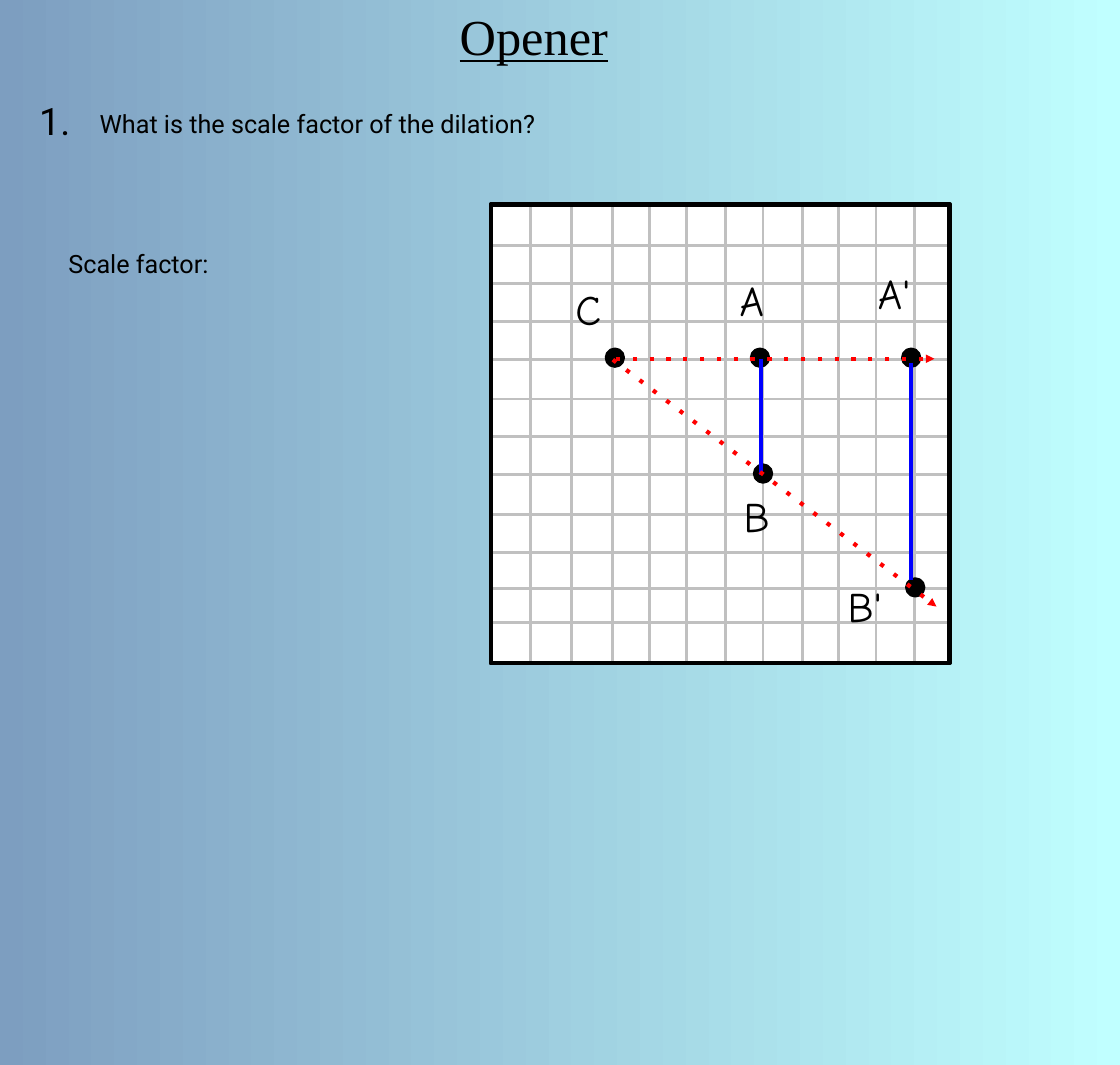
from lxml import etree
from pptx import Presentation
from pptx.dml.color import RGBColor
from pptx.enum.shapes import MSO_CONNECTOR, MSO_SHAPE
from pptx.enum.text import MSO_ANCHOR, PP_ALIGN
from pptx.oxml.ns import qn
from pptx.util import Inches, Pt

STRAIGHT = MSO_CONNECTOR.STRAIGHT
OVAL = MSO_SHAPE.OVAL
RECTANGLE = MSO_SHAPE.RECTANGLE
TOP = MSO_ANCHOR.TOP
LEFT = PP_ALIGN.LEFT

BLACK = RGBColor(0x00, 0x00, 0x00)
WHITE = RGBColor(0xFF, 0xFF, 0xFF)
GRAY = RGBColor(0xC0, 0xC0, 0xC0)
BLUE = RGBColor(0x00, 0x00, 0xFF)
RED = RGBColor(0xFF, 0x00, 0x00)
STEEL = RGBColor(0x7D, 0x9E, 0xC0)
AQUA = RGBColor(0xC0, 0xFF, 0xFF)

TITLE_FONT = "Times New Roman"
BODY_FONT = "Roboto"
LABEL_FONT = "Comic Neue"

GRID_SIDE = 4.55
DOT_SIZE = 0.16
COLUMN_LINES = [0.39, 0.8, 1.21, 1.57, 1.94, 2.33, 2.7, 3.09, 3.45, 3.82, 4.2]
ROW_LINES = [0.41, 0.78, 1.16, 1.54, 1.93, 2.3, 2.68, 3.08, 3.45, 3.81, 4.15]
POINTS = [(1.23, 1.52), (2.67, 1.52), (2.7, 2.67), (4.17, 1.52), (4.21, 3.8)]
LABELS = [
    ("C", 0.74, 0.73, 0.48),
    ("A", 2.37, 0.65, 0.55),
    ("B", 2.41, 2.79, 0.49),
    ("A'", 3.74, 0.58, 0.77),
    ("B'", 3.44, 3.68, 0.71),
]
SEGMENTS = [((4.17, 1.57), (4.17, 3.73)), ((2.68, 1.53), (2.68, 2.68))]
RAYS = [((1.24, 1.53), (4.4, 1.53)), ((1.21, 1.54), (4.42, 3.99))]


def write_text(box, text, font, size, underline=None):
    frame = box.text_frame
    frame.word_wrap = True
    frame.vertical_anchor = TOP
    para = frame.paragraphs[0]
    para.alignment = LEFT
    span = para.add_run()
    span.text = text
    span.font.name = font
    span.font.size = Pt(size)
    span.font.underline = underline
    span.font.color.rgb = BLACK


def add_text(page, text, left, top, width, height, font, size):
    box = page.shapes.add_textbox(
        Inches(left), Inches(top), Inches(width), Inches(height))
    write_text(box, text, font, size)


def add_line(page, left, top, start, end, color, width):
    line = page.shapes.add_connector(
        STRAIGHT,
        Inches(left + start[0]), Inches(top + start[1]),
        Inches(left + end[0]), Inches(top + end[1]))
    line.line.color.rgb = color
    line.line.width = Pt(width)
    etree.SubElement(line._element.spPr, qn("a:effectLst"))
    return line


def add_ray(page, left, top, start, end):
    ray = add_line(page, left, top, start, end, RED, 3)
    outline = ray.line._get_or_add_ln()
    etree.SubElement(outline, qn("a:prstDash"), val="dot")
    etree.SubElement(outline, qn("a:tailEnd"),
                     type="triangle", w="sm", len="sm")


def add_solid(page, kind, left, top, side, fill=None):
    shape = page.shapes.add_shape(
        kind, Inches(left), Inches(top), Inches(side), Inches(side))
    shape.shadow.inherit = False
    if fill is None:
        shape.fill.background()
    else:
        shape.fill.solid()
        shape.fill.fore_color.rgb = fill
    shape.line.color.rgb = BLACK
    shape.line.width = Pt(3)


def paint_background(page):
    fill = page.background.fill
    fill.gradient()
    fill.gradient_angle = 0
    for stop, color in zip(fill.gradient_stops, (STEEL, AQUA)):
        stop.color.rgb = color


def place_title(page, left, top, width, height):
    title = page.shapes.title
    title.left, title.top = Inches(left), Inches(top)
    title.width, title.height = Inches(width), Inches(height)
    write_text(title, "Opener", TITLE_FONT, 36, underline=True)


def add_question(page, left, top):
    add_text(page, "1.", left, top, 0.56, 0.56, BODY_FONT, 27)
    add_text(page, "What is the scale factor of the dilation?",
             left + 0.6, top + 0.11, 7.44, 0.4, BODY_FONT, 18)
    add_text(page, "Scale factor:", left + 0.29, top + 1.5,
             2.05, 0.4, BODY_FONT, 18)


def add_grid(page, left, top):
    add_solid(page, RECTANGLE, left, top, GRID_SIDE, WHITE)
    for x in COLUMN_LINES:
        add_line(page, left, top, (x, 0), (x, GRID_SIDE), GRAY, 2)
    for y in ROW_LINES:
        add_line(page, left, top, (0, y), (GRID_SIDE, y), GRAY, 2)
    add_solid(page, RECTANGLE, left, top, GRID_SIDE)


def add_dilation(page, left, top):
    add_grid(page, left, top)
    for x, y in POINTS:
        add_solid(page, OVAL, left + x - DOT_SIZE / 2,
                  top + y - DOT_SIZE / 2, DOT_SIZE, BLACK)
    for text, x, y, width in LABELS:
        add_text(page, text, left + x, top + y, width, 0.61, LABEL_FONT, 30)
    for start, end in SEGMENTS:
        add_line(page, left, top, start, end, BLUE, 3)
    for start, end in RAYS:
        add_ray(page, left, top, start, end)


def main():
    deck = Presentation()
    deck.slide_width = Pt(800)
    deck.slide_height = Pt(761)
    page = deck.slides.add_slide(deck.slide_layouts[5])
    paint_background(page)
    place_title(page, 4.46, 0, 2.83, 0.71)
    add_question(page, 0.29, 0.92)
    add_dilation(page, 4.87, 2.03)
    deck.save("out.pptx")


if __name__ == "__main__":
    main()
